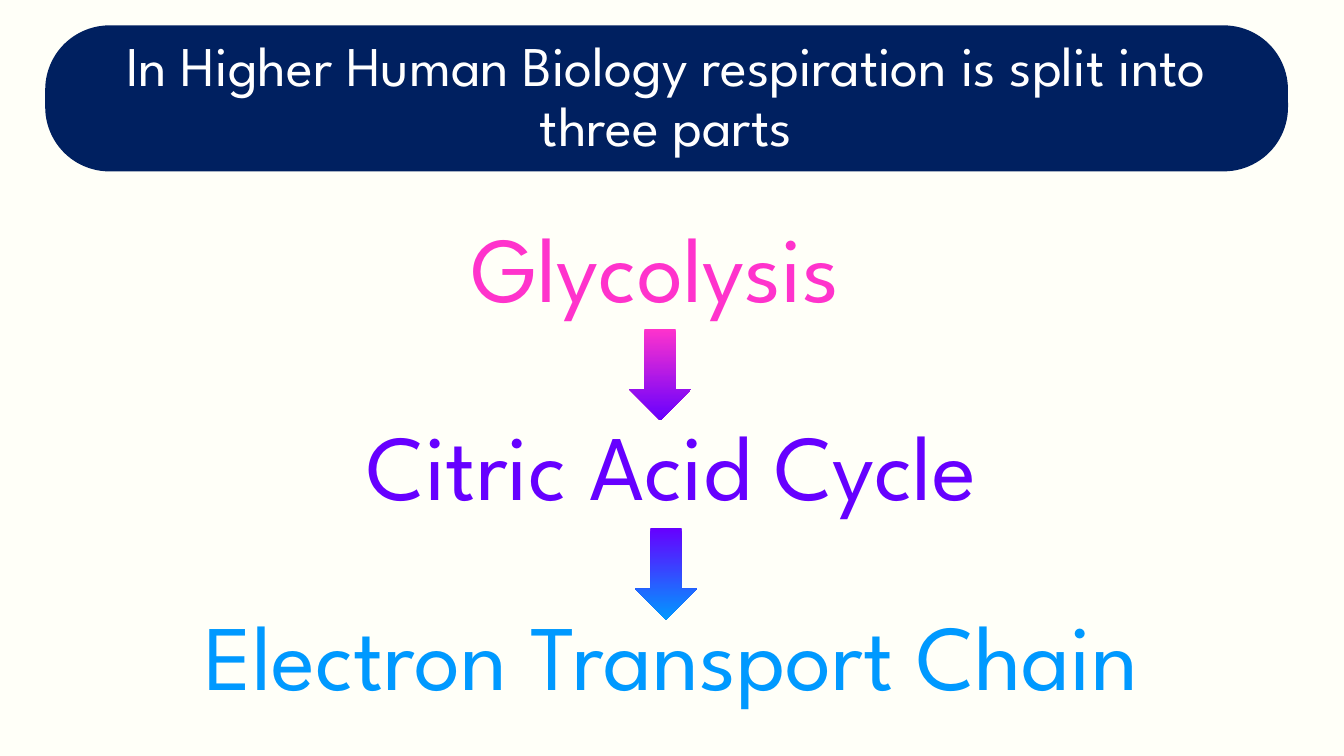
from dataclasses import dataclass

from pptx import Presentation
from pptx.dml.color import RGBColor
from pptx.enum.shapes import MSO_SHAPE
from pptx.enum.text import MSO_ANCHOR, MSO_AUTO_SIZE, PP_ALIGN
from pptx.util import Cm, Pt

ROUNDED = MSO_SHAPE.ROUNDED_RECTANGLE
DOWN_ARROW = MSO_SHAPE.DOWN_ARROW
MIDDLE = MSO_ANCHOR.MIDDLE
TOP = MSO_ANCHOR.TOP
CENTER = PP_ALIGN.CENTER
FIXED_SIZE = MSO_AUTO_SIZE.NONE
GROW = MSO_AUTO_SIZE.SHAPE_TO_FIT_TEXT

FONT = "League Spartan"
CREAM, NAVY, WHITE = "FFFFF8", "002060", "FFFFFF"
PINK, VIOLET, BLUE = "FF33CC", "6600FF", "0099FF"
TITLE = "In Higher Human Biology respiration is split into three parts"
BANNER_TOP, BANNER_HEIGHT = 0.64, 3.68
STAGE_HEIGHT = 3.07
ARROW_WIDTH, ARROW_HEIGHT = 1.57, 2.31


@dataclass
class Stage:
    text: str
    left: float
    top: float
    width: float
    color: str


@dataclass
class Arrow:
    left: float
    top: float
    start: str
    end: str


STAGES = [
    Stage("Glycolysis ", 10.44, 5.18, 12.73, PINK),
    Stage("Citric Acid Cycle", 6.86, 10.16, 20.14, VIOLET),
    Stage("Electron Transport Chain", 2.36, 14.94, 29.13, BLUE),
]
ARROWS = [
    Arrow(15.85, 8.28, PINK, VIOLET),
    Arrow(16.0, 13.31, VIOLET, BLUE),
]


def rgb(value: str) -> RGBColor:
    return RGBColor.from_string(value)


def apply_format(target, values: dict) -> None:
    for name, value in values.items():
        setattr(target, name, value)


def write_text(box, text: str, size: float, color: str,
               frame_format: dict, para_format: dict) -> None:
    frame = box.text_frame
    apply_format(frame, frame_format)
    para = frame.paragraphs[0]
    apply_format(para, {"alignment": CENTER, **para_format})
    span = para.add_run()
    span.text = text
    apply_format(span.font, {"name": FONT, "size": Pt(size)})
    span.font.color.rgb = rgb(color)


def add_plain_shape(page, kind, left: float, top: float,
                    width: float, height: float):
    shape = page.shapes.add_shape(kind, Cm(left), Cm(top), Cm(width), Cm(height))
    shape.shadow.inherit = False
    shape.line.fill.background()
    return shape


def add_banner(page) -> None:
    banner = add_plain_shape(page, ROUNDED, 1.14, BANNER_TOP, 31.32, BANNER_HEIGHT)
    banner.adjustments[0] = 0.44
    banner.fill.solid()
    banner.fill.fore_color.rgb = rgb(NAVY)

    title = page.shapes.title
    apply_format(title, {"left": Cm(2.18), "top": Cm(BANNER_TOP),
                         "width": Cm(29.21), "height": Cm(BANNER_HEIGHT)})
    write_text(title, TITLE, 40, WHITE,
               {"vertical_anchor": MIDDLE, "word_wrap": True, "auto_size": FIXED_SIZE},
               {"line_spacing": 0.9, "space_before": Pt(0)})
    # The banner lies behind the title
    title.element.addprevious(banner.element)


def add_stage(page, stage: Stage) -> None:
    box = page.shapes.add_textbox(Cm(stage.left), Cm(stage.top),
                                  Cm(stage.width), Cm(STAGE_HEIGHT))
    write_text(box, stage.text, 66, stage.color,
               {"vertical_anchor": TOP, "word_wrap": False, "auto_size": GROW}, {})


def add_arrow(page, arrow: Arrow) -> None:
    shape = add_plain_shape(page, DOWN_ARROW, arrow.left, arrow.top,
                            ARROW_WIDTH, ARROW_HEIGHT)
    shape.fill.gradient()
    shape.fill.gradient_angle = 270
    for stop, color in zip(shape.fill.gradient_stops, (arrow.start, arrow.end)):
        stop.color.rgb = rgb(color)


def main() -> None:
    deck = Presentation()
    apply_format(deck, {"slide_width": Cm(33.87), "slide_height": Cm(19.05)})
    page = deck.slides.add_slide(deck.slide_layouts.get_by_name("Title Only"))
    page.background.fill.solid()
    page.background.fill.fore_color.rgb = rgb(CREAM)

    # Heading
    add_banner(page)

    # Stages of respiration and the arrows between them
    for stage in STAGES:
        add_stage(page, stage)
    for arrow in ARROWS:
        add_arrow(page, arrow)

    deck.save("out.pptx")


if __name__ == "__main__":
    main()
